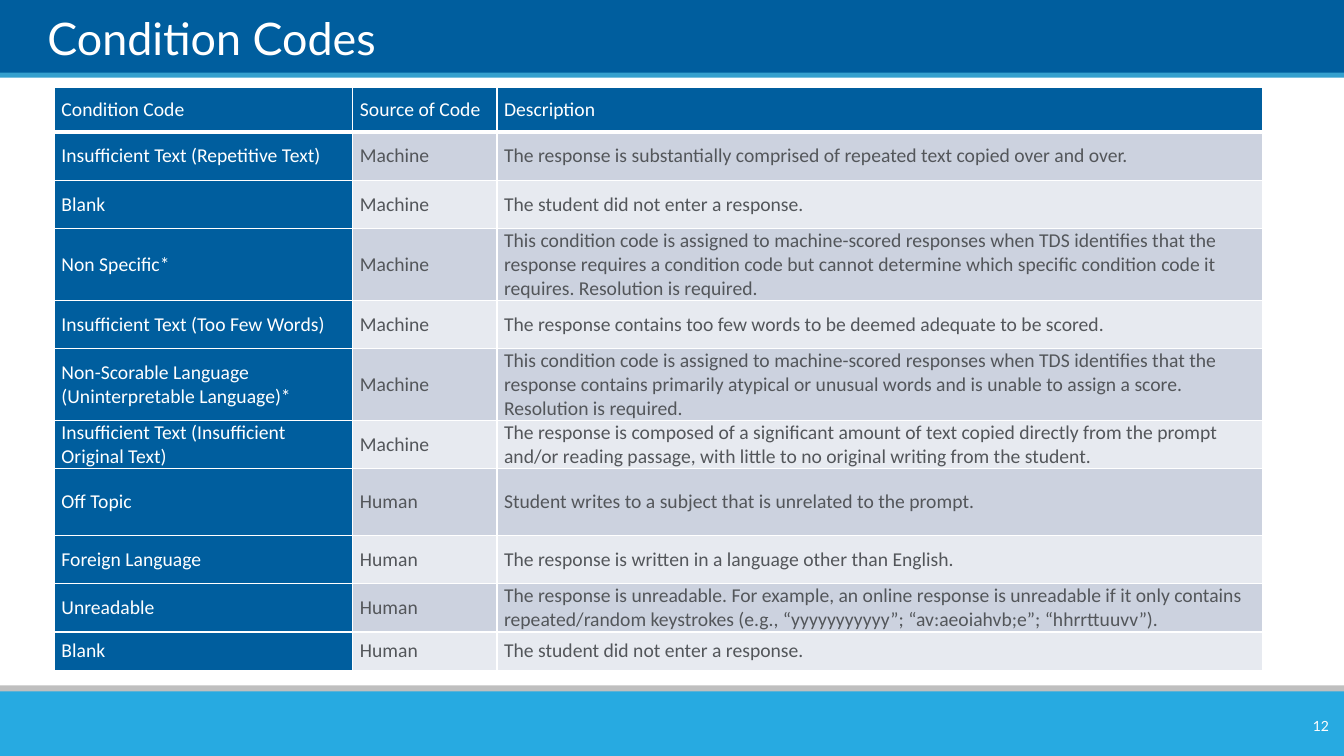
from lxml import etree
from pptx import Presentation
from pptx.dml.color import RGBColor
from pptx.enum.shapes import MSO_SHAPE as Shape
from pptx.enum.text import MSO_ANCHOR as Anchor, PP_ALIGN as Align
from pptx.oxml.ns import qn
from pptx.util import Inches, Pt

# Content
TITLE = "Condition Codes"
PAGE_NUMBER = "12"
HEADER = ("Condition Code", "Source of Code", "Description")
CODES = [
    ("Insufficient Text (Repetitive Text)", "Machine",
     "The response is substantially comprised of repeated text copied over and over."),
    ("Blank", "Machine", "The student did not enter a response."),
    ("Non Specific*", "Machine",
     "This condition code is assigned to machine-scored responses when TDS identifies "
     "that the response requires a condition code but cannot determine which specific "
     "condition code it requires. Resolution is required."),
    ("Insufficient Text (Too Few Words)", "Machine",
     "The response contains too few words to be deemed adequate to be scored."),
    ("Non-Scorable Language (Uninterpretable Language)*", "Machine",
     "This condition code is assigned to machine-scored responses when TDS identifies "
     "that the response contains primarily atypical or unusual words and is unable to "
     "assign a score. Resolution is required."),
    ("Insufficient Text (Insufficient Original Text)", "Machine",
     "The response is composed of a significant amount of text copied directly from the "
     "prompt and/or reading passage, with little to no original writing from the student."),
    ("Off Topic", "Human", "Student writes to a subject that is unrelated to the prompt."),
    ("Foreign Language", "Human",
     "The response is written in a language other than English."),
    ("Unreadable", "Human",
     "The response is unreadable. For example, an online response is unreadable if it "
     "only contains repeated/random keystrokes (e.g., “yyyyyyyyyyy”; “av:aeoiahvb;e”; "
     "“hhrrttuuvv”)."),
    ("Blank", "Human", "The student did not enter a response."),
]
COLORS = {"navy": "005E9E", "stripe": "35A0CE", "gray": "BFBFBF", "sky": "27AAE1",
          "white": "FFFFFF", "text": "53565A", "odd": "CCD2DF", "even": "E7EAF0"}

# Layout, in inches
WIDTH, HEIGHT = 13.33, 7.5
BANDS = [("navy", -0.01, 0.75), ("stripe", 0.72, 0.05),
         ("gray", 6.8, 0.14), ("sky", 6.86, 0.64)]
TABLE_LEFT, TABLE_TOP = 0.54, 0.87
COLUMNS = (2.96, 1.43, 7.59)
USUAL_ROW = 0.48
OTHER_ROWS = {0: 0.44, 3: 0.7, 5: 0.7, 7: 0.66, 10: 0.38}


def rgb(name):
    return RGBColor.from_string(COLORS[name])


def write(frame, text, font, size, color, align=Align.LEFT):
    para = frame.paragraphs[0]
    para.alignment = align
    span = para.add_run()
    span.text = text
    span.font.name, span.font.size = font, Pt(size)
    span.font.color.rgb = rgb(color)


def add_label(page, area, text, size, anchor, align, inset):
    box = page.shapes.add_textbox(*map(Inches, area))
    frame = box.text_frame
    frame.word_wrap = True
    frame.vertical_anchor = anchor
    frame.margin_left = frame.margin_right = Inches(inset)
    frame.margin_top = frame.margin_bottom = Inches(inset / 2)
    write(frame, text, "Lato", size, "white", align)


def add_borders(cell, bottom):
    properties = cell._tc.get_or_add_tcPr()
    for place, (side, points) in enumerate(
            [("lnL", 1), ("lnR", 1), ("lnT", 1), ("lnB", bottom)]):
        line = etree.Element(qn("a:" + side), w=str(Pt(points)))
        fill = etree.SubElement(line, qn("a:solidFill"))
        etree.SubElement(fill, qn("a:srgbClr"), val=COLORS["white"])
        properties.insert(place, line)


def add_code_table(page):
    rows = [HEADER] + CODES
    heights = [OTHER_ROWS.get(index, USUAL_ROW) for index in range(len(rows))]
    area = (TABLE_LEFT, TABLE_TOP, sum(COLUMNS), sum(heights))
    table = page.shapes.add_table(len(rows), len(COLUMNS), *map(Inches, area)).table
    for column, width in zip(table.columns, COLUMNS):
        column.width = Inches(width)
    for r, (values, height) in enumerate(zip(rows, heights)):
        table.rows[r].height = Inches(height)
        for c, value in enumerate(values):
            cell = table.cell(r, c)
            heading = r == 0 or c == 0
            cell.margin_left = cell.margin_right = Inches(0.07)
            cell.margin_top = cell.margin_bottom = 0
            cell.vertical_anchor = Anchor.MIDDLE
            cell.fill.solid()
            cell.fill.fore_color.rgb = rgb("navy" if heading else "odd" if r % 2 else "even")
            add_borders(cell, 3 if r == 0 else 1)
            write(cell.text_frame, value, "Calibri", 14, "white" if heading else "text")


def main():
    deck = Presentation()
    deck.slide_width, deck.slide_height = Inches(WIDTH), Inches(HEIGHT)
    page = deck.slides.add_slide(deck.slide_layouts[6])

    # Header and footer bands
    for color, top, height in BANDS:
        band = page.shapes.add_shape(Shape.RECTANGLE, 0, Inches(top),
                                     Inches(WIDTH), Inches(height))
        band.shadow.inherit = False
        band.fill.solid()
        band.fill.fore_color.rgb = rgb(color)
        band.line.fill.background()

    # Table, page number and title
    add_code_table(page)
    add_label(page, (12.51, 7.05, 0.77, 0.3), PAGE_NUMBER, 10,
              Anchor.MIDDLE, Align.RIGHT, 0.1)
    add_label(page, (0.47, 0.07, 12.43, 0.57), TITLE, 32,
              Anchor.BOTTOM, Align.LEFT, 0)
    deck.save("out.pptx")


if __name__ == "__main__":
    main()
